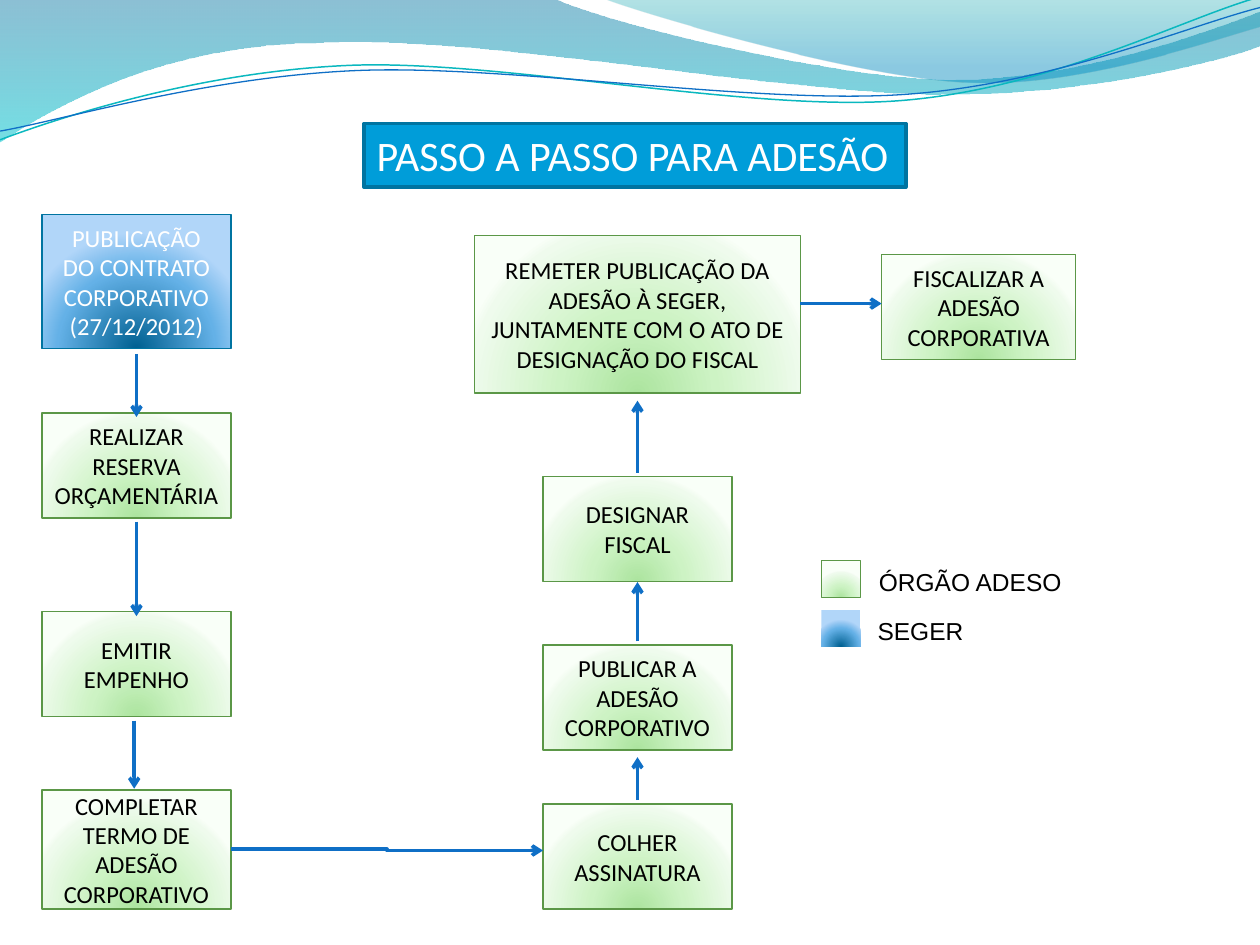
import pptx
import pptx.dml.color
import pptx.enum.shapes
import pptx.enum.text
import pptx.oxml
import pptx.oxml.ns
import pptx.util

Pt = pptx.util.Pt
RGB = pptx.dml.color.RGBColor
TEXT = pptx.enum.text
SHAPES = pptx.enum.shapes
qn = pptx.oxml.ns.qn

WHITE = RGB(0xFF, 0xFF, 0xFF)
BLACK = RGB(0x00, 0x00, 0x00)
SKY = RGB(0x00, 0x9D, 0xD9)
NAVY = RGB(0x00, 0x74, 0xA1)
BLUE = RGB(0x0F, 0x6F, 0xC6)
TEAL = RGB(0x0A, 0xB8, 0xBF)
CYAN = RGB(0x00, 0xC6, 0xCF)
SEA = RGB(0x00, 0xA1, 0xA9)
AZURE = RGB(0x00, 0x8B, 0xBF)
LEAF = RGB(0x5B, 0x97, 0x47)
LEAF_STOPS = [(0, RGB(0xAC, 0xE4, 0x9F), 100), (43, RGB(0xCD, 0xF3, 0xC4), 100),
              (93, RGB(0xEF, 0xFB, 0xED), 100), (100, RGB(0xF9, 0xFF, 0xF8), 100)]
SEGER_STOPS = [(0, RGB(0x00, 0x60, 0x91), 100), (68, RGB(0x64, 0xB1, 0xE7), 100),
               (100, RGB(0xB1, 0xD6, 0xF9), 100)]
LINEAR = '<a:lin {ns} ang="5400000" scaled="0"/>'
RADIAL = ('<a:path {ns} path="circle"><a:fillToRect l="50000" t="130000" '
          'r="50000" b="-30000"/></a:path>')
NS = pptx.oxml.ns.nsdecls("a")

BAND = [(0, -0.7), [(316.8, -0.7)], [(342.7, 12.2), (478.1, 45.4), (545.8, 45.4)],
        [(614.2, 45.4), (689.8, 18.7), (720, 6.5)], [(720.7, 25.9)],
        [(707.8, 31.7), (626.4, 54.7), (537.1, 54)],
        [(447.8, 54), (275, 20.2), (185, 24.5)], [(92.9, 25.2), (33.1, 59.8), (-0.7, 81.4)]]
CREST = [(344.9, -0.7), [(366.5, 7.9), (491, 44.6), (553.7, 46.8)],
         [(616.3, 49.7), (691.9, 23), (720, 15.1)], [(720, 0)]]
TEAL_WAVE = [(0, 79.9), [(34.6, 67), (113.8, 41), (199.4, 37.4)],
             [(284.4, 33.8), (427, 64.1), (513.4, 57.6)],
             [(599.8, 51.1), (675.4, 10.8), (718.6, -1.4)]]
BLUE_WAVE = [(0, 74.9), [(33.8, 69.1), (118.1, 43.9), (203.8, 40.3)],
             [(290.2, 36.7), (429.8, 59.8), (516.2, 54)],
             [(601.9, 48.2), (677.5, 15.1), (720, 4.3)]]


def set_gradient(shape, stops, direction):
    """Fill a shape with (position, colour, opacity) stops."""
    shape.fill.gradient()
    gradient = shape.element.spPr.find(qn("a:gradFill"))
    for child in list(gradient):
        gradient.remove(child)
    stop_xml = "".join(
        f'<a:gs pos="{position * 1000}"><a:srgbClr val="{color}">'
        f'<a:alpha val="{opacity * 1000}"/></a:srgbClr></a:gs>'
        for position, color, opacity in stops)
    gradient.append(pptx.oxml.parse_xml(f"<a:gsLst {NS}>{stop_xml}</a:gsLst>"))
    gradient.append(pptx.oxml.parse_xml(direction.format(ns=NS)))


def add_outline(slide, outline, close):
    """Draw straight and cubic segments as a freeform."""
    start, *segments = outline
    builder = slide.shapes.build_freeform(Pt(start[0]), Pt(start[1]))
    builder.add_line_segments([(Pt(x), Pt(y)) for x, y in (s[-1] for s in segments)],
                              close=close)
    shape = builder.convert_to_shape()
    for line, segment in zip(list(shape.element.iter(qn("a:lnTo"))), segments):
        if len(segment) == 3:
            points = "".join(f'<a:pt x="{Pt(x) - shape.left}" y="{Pt(y) - shape.top}"/>'
                             for x, y in segment)
            line.getparent().replace(line, pptx.oxml.parse_xml(
                f"<a:cubicBezTo {NS}>{points}</a:cubicBezTo>"))
    shape.shadow.inherit = False
    return shape


def add_waves(slide):
    """Draw the flowing header across the top."""
    for outline, stops in ((BAND, [(0, NAVY, 45), (100, CYAN, 55)]),
                           (CREST, [(0, SEA, 30), (80, AZURE, 45)])):
        swoosh = add_outline(slide, outline, True)
        set_gradient(swoosh, stops, LINEAR)
        swoosh.line.fill.background()
    for outline, color, width in ((TEAL_WAVE, TEAL, 0.85), (BLUE_WAVE, BLUE, 0.75)):
        wave = add_outline(slide, outline, False)
        wave.fill.background()
        wave.line.color.rgb = color
        wave.line.width = Pt(width)


def write(shape, text, size, color, font, align):
    """Write one formatted paragraph into a shape."""
    paragraph = shape.text_frame.paragraphs[0]
    paragraph.text = text
    paragraph.alignment = align
    paragraph.font.size = Pt(size)
    paragraph.font.name = font
    paragraph.font.color.rgb = color


def add_title(slide, left, top, width, height):
    """Place the framed slide title."""
    title = slide.shapes.title
    title.left, title.top, title.width, title.height = map(Pt, (left, top, width, height))
    title.fill.solid()
    title.fill.fore_color.rgb = SKY
    title.line.color.rgb = NAVY
    title.line.width = Pt(2)
    write(title, "PASSO A PASSO PARA ADESÃO", 24, WHITE, "Calibri", TEXT.PP_ALIGN.LEFT)
    title.text_frame.word_wrap = False
    title.text_frame.auto_size = TEXT.MSO_AUTO_SIZE.NONE
    title.text_frame.vertical_anchor = TEXT.MSO_ANCHOR.TOP


def add_box(slide, box, seger=False, outlined=True):
    """Draw a shaded box in the colours of its responsible party."""
    panel = slide.shapes.add_shape(SHAPES.MSO_SHAPE.RECTANGLE, *map(Pt, box))
    set_gradient(panel, SEGER_STOPS if seger else LEAF_STOPS, RADIAL)
    if outlined:
        panel.line.color.rgb = NAVY if seger else LEAF
        panel.line.width = Pt(0.75)
    else:
        panel.line.fill.background()
    panel.shadow.inherit = False
    return panel


def add_step(slide, text, left, top, width=108, height=60, seger=False):
    """Draw one step of the flow."""
    step = add_box(slide, (left, top, width, height), seger)
    write(step, text, 14, WHITE if seger else BLACK, "Calibri", TEXT.PP_ALIGN.CENTER)
    step.text_frame.word_wrap = True
    step.text_frame.vertical_anchor = TEXT.MSO_ANCHOR.MIDDLE


def add_arrow(slide, x1, y1, x2, y2, kind=SHAPES.MSO_CONNECTOR.STRAIGHT):
    """Draw an arrow from one step to the next."""
    arrow = slide.shapes.add_connector(kind, *map(Pt, (x1, y1, x2, y2)))
    arrow.line.color.rgb = BLUE
    arrow.line.width = Pt(2)
    arrow.line._get_or_add_ln().append(
        pptx.oxml.parse_xml(f'<a:tailEnd {NS} type="arrow"/>'))
    arrow.element.spPr.append(pptx.oxml.parse_xml(f"<a:effectLst {NS}/>"))


def add_flow(slide, left, right):
    """Lay out the steps in two columns and join them."""
    elbow = SHAPES.MSO_CONNECTOR.ELBOW
    add_step(slide, "PUBLICAÇÃO DO CONTRATO CORPORATIVO (27/12/2012)", left, 122.4,
             height=77, seger=True)
    add_step(slide, "REALIZAR RESERVA ORÇAMENTÁRIA", left, 236)
    add_step(slide, "EMITIR EMPENHO", left, 349.4)
    add_step(slide, "COMPLETAR TERMO DE ADESÃO CORPORATIVO", left, 451.4, height=68)
    add_step(slide, "COLHER ASSINATURA", right, 459.4)
    add_step(slide, "PUBLICAR A ADESÃO CORPORATIVO", right, 368.6)
    add_step(slide, "FISCALIZAR A ADESÃO CORPORATIVA", right + 193.5, 145.4, 111)
    add_step(slide, "REMETER PUBLICAÇÃO DA ADESÃO À SEGER, JUNTAMENTE COM O ATO DE "
             "DESIGNAÇÃO DO FISCAL", right - 39, 134.6, 186, 90)
    for x, y1, y2 in ((54, 202.3, 238.3), (54, 298.1, 352.1), (52.7, 411.8, 450.7)):
        add_arrow(slide, left + x, y1, left + x, y2)
    add_arrow(slide, left + 108, 485.3, right, 486, elbow)
    for y1, y2 in ((457.2, 432.7), (366.5, 332.6), (270, 229)):
        add_arrow(slide, right + 54, y1, right + 54, y2)
    add_step(slide, "DESIGNAR FISCAL", right, 272.2)
    add_arrow(slide, right + 147, 173.5, right + 193.5, 173.5, elbow)


def add_legend(slide, left, top):
    """Explain the two box colours."""
    for row, (name, offset, width, seger) in enumerate((
            ("ÓRGÃO ADESO", 25.7, 119.5, False), ("SEGER", 25, 64, True))):
        row_top = top + row * 28.1
        add_box(slide, (left, row_top, 22.3, 21), seger, outlined=not seger)
        label = slide.shapes.add_textbox(*map(Pt, (left + offset, row_top, width, 24.2)))
        write(label, name, 14, BLACK, "Arial", TEXT.PP_ALIGN.LEFT)
        label.text_frame.word_wrap = False
        label.text_frame.auto_size = TEXT.MSO_AUTO_SIZE.SHAPE_TO_FIT_TEXT


def main():
    """Build the slide and save it."""
    deck = pptx.Presentation()
    deck.slide_width, deck.slide_height = Pt(720), Pt(540)
    slide = deck.slides.add_slide(deck.slide_layouts[5])
    add_waves(slide)
    add_title(slide, 208, 70.6, 309.6, 36.4)
    add_flow(slide, 24, 310.3)
    add_legend(slide, 469.4, 320.4)
    deck.save("out.pptx")


if __name__ == "__main__":
    main()
